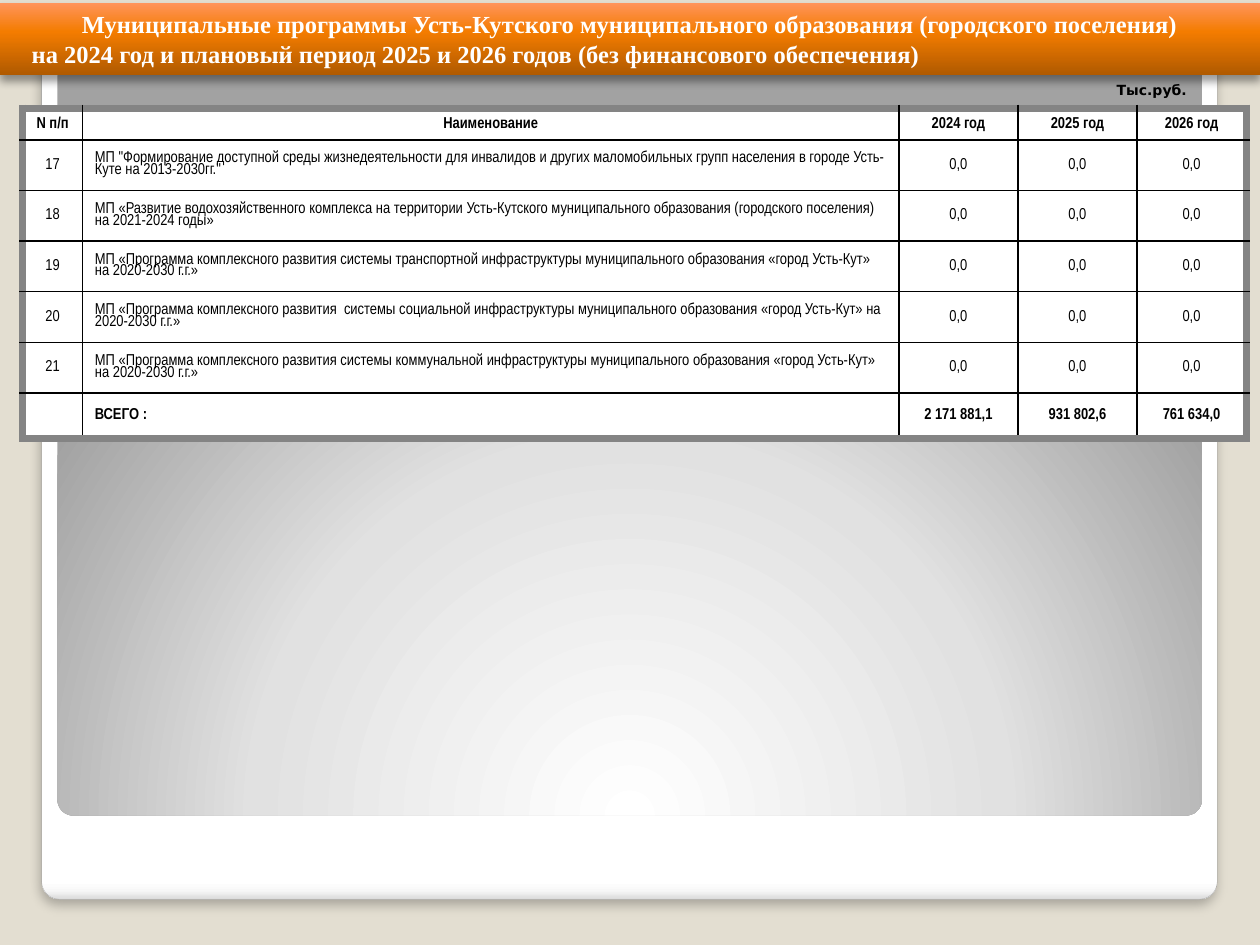
from lxml import etree
from pptx import Presentation
from pptx.dml.color import RGBColor
from pptx.enum.shapes import MSO_SHAPE
from pptx.enum.text import MSO_ANCHOR, PP_ALIGN
from pptx.oxml.ns import qn
from pptx.util import Cm, Pt

RECTANGLE, ROUNDED = MSO_SHAPE.RECTANGLE, MSO_SHAPE.ROUNDED_RECTANGLE
LEFT, CENTER = PP_ALIGN.LEFT, PP_ALIGN.CENTER
MIDDLE = MSO_ANCHOR.MIDDLE

BEIGE = RGBColor(0xE3, 0xDE, 0xD1)
WHITE = RGBColor(0xFF, 0xFF, 0xFF)
BLACK = RGBColor(0x00, 0x00, 0x00)
NEAR_WHITE = RGBColor(0xF7, 0xF7, 0xF7)
PALE_GREY = RGBColor(0xDA, 0xDA, 0xDA)
LIGHT_GREY = RGBColor(0xE1, 0xE1, 0xE1)
MID_GREY = RGBColor(0xA2, 0xA2, 0xA2)
CARD_LINE = RGBColor(0xA4, 0xA4, 0xA4)
FRAME_GREY = RGBColor(0x84, 0x84, 0x84)
DARK_ORANGE = RGBColor(0xB0, 0x5A, 0x00)
ORANGE = RGBColor(0xF4, 0x7C, 0x00)
LIGHT_ORANGE = RGBColor(0xFF, 0x94, 0x5C)

TITLE_LINES = [
    ("Муниципальные программы Усть-Кутского муниципального образования (городского поселения)", CENTER),
    ("на 2024 год и плановый период 2025 и 2026 годов (без финансового обеспечения)", LEFT),
]
HEADER = ["N п/п", "Наименование", "2024 год", "2025 год", "2026 год"]
PROGRAMS = [
    "МП \"Формирование доступной среды жизнедеятельности для инвалидов и других маломобильных групп населения в городе Усть-Куте на 2013-2030гг.\"",
    "МП «Развитие водохозяйственного комплекса на территории Усть-Кутского муниципального образования (городского поселения) на 2021-2024 годы»",
    "МП «Программа комплексного развития системы транспортной инфраструктуры муниципального образования «город Усть-Кут» на 2020-2030 г.г.»",
    "МП «Программа комплексного развития  системы социальной инфраструктуры муниципального образования «город Усть-Кут» на 2020-2030 г.г.»",
    "МП «Программа комплексного развития системы коммунальной инфраструктуры муниципального образования «город Усть-Кут» на 2020-2030 г.г.»",
]
FIRST_NUMBER = 17
TOTAL = ["", "ВСЕГО :", "2 171 881,1", "931 802,6", "761 634,0"]
COLUMN_WIDTHS = [1.2, 16.46, 2.4, 2.4, 2.2]
ROW_HEIGHTS = [0.64] + [1.02] * len(PROGRAMS) + [0.92]


def add_xml(parent, tag, **attributes):
    values = {name: str(value) for name, value in attributes.items()}
    return etree.SubElement(parent, qn(tag), values)


def set_gradient(shape, stops, angle=None):
    """Fill with (percent, colour) stops; without an angle, spread from below."""
    shape.fill.gradient()
    gradient = shape.element.spPr.find(qn("a:gradFill"))
    for child in list(gradient):
        gradient.remove(child)
    stop_list = add_xml(gradient, "a:gsLst")
    for percent, color in stops:
        stop = add_xml(stop_list, "a:gs", pos=percent * 1000)
        add_xml(stop, "a:srgbClr", val=color)
    if angle is None:
        radial = add_xml(gradient, "a:path", path="circle")
        add_xml(radial, "a:fillToRect", l=50000, t=175000, r=50000, b=-75000)
    else:
        add_xml(gradient, "a:lin", ang=angle * 60000, scaled=0)


def set_shadow(shape, opacity, blur, distance):
    effects = shape.element.spPr.find(qn("a:effectLst"))
    shadow = add_xml(effects, "a:outerShdw", blurRad=Pt(blur), dist=Pt(distance),
                     dir=90 * 60000, algn="t", rotWithShape=0)
    color = add_xml(shadow, "a:srgbClr", val=BLACK)
    add_xml(color, "a:alpha", val=opacity * 1000)


def add_panel(slide, kind, left, top, width, height):
    shape = slide.shapes.add_shape(kind, Cm(left), Cm(top), Cm(width), Cm(height))
    shape.shadow.inherit = False
    shape.line.fill.background()
    if kind == ROUNDED:
        shape.adjustments[0] = 0.021
    return shape


def style_paragraph(paragraph, text, font_name, size, color, bold, alignment):
    paragraph.text = text
    paragraph.alignment = alignment
    font = paragraph.font
    font.name, font.size, font.bold = font_name, Pt(size), bold
    font.color.rgb = color


def set_border(cell, position, side, color, width):
    line = etree.Element(qn(f"a:ln{side}"), {"w": str(Pt(width))})
    add_xml(add_xml(line, "a:solidFill"), "a:srgbClr", val=color)
    cell._tc.get_or_add_tcPr().insert(position, line)


def add_backdrop(slide):
    card = add_panel(slide, ROUNDED, 0.84, 0.91, 23.7, 17.22)
    set_gradient(card, [(0, WHITE), (98, WHITE), (99, NEAR_WHITE), (100, PALE_GREY)], 90)
    card.line.color.rgb = CARD_LINE
    card.line.width = Pt(0.16)
    set_shadow(card, 25, 6, 4)
    inner = add_panel(slide, ROUNDED, 1.16, 1.2, 23.07, 15.24)
    set_gradient(inner, [(0, WHITE), (55, LIGHT_GREY), (100, MID_GREY)])


def add_title(slide):
    banner = add_panel(slide, RECTANGLE, 0, 0.06, 25.4, 1.45)
    set_gradient(banner, [(0, DARK_ORANGE), (60, ORANGE), (100, LIGHT_ORANGE)], 270)
    set_shadow(banner, 40, 5.2, 3)
    frame = banner.text_frame
    frame.word_wrap = True
    frame.vertical_anchor = MIDDLE
    frame.margin_left = frame.margin_right = Cm(0.64)
    frame.margin_top = frame.margin_bottom = 0
    for index, (text, alignment) in enumerate(TITLE_LINES):
        paragraph = frame.add_paragraph() if index else frame.paragraphs[0]
        style_paragraph(paragraph, text, "Times New Roman", 14, WHITE, True, alignment)


def add_program_table(slide):
    rows = [HEADER]
    for number, name in enumerate(PROGRAMS, FIRST_NUMBER):
        rows.append([str(number), name] + ["0,0"] * 3)
    rows.append(TOTAL)
    last_row, last_column = len(rows) - 1, len(HEADER) - 1

    table = slide.shapes.add_table(len(rows), len(HEADER), Cm(0.46), Cm(2.18),
                                   Cm(sum(COLUMN_WIDTHS)), Cm(sum(ROW_HEIGHTS))).table
    for column, width in zip(table.columns, COLUMN_WIDTHS):
        column.width = Cm(width)
    for row, height in zip(table.rows, ROW_HEIGHTS):
        row.height = Cm(height)

    for r, values in enumerate(rows):
        for c, text in enumerate(values):
            cell = table.cell(r, c)
            cell.fill.solid()
            cell.fill.fore_color.rgb = WHITE
            cell.vertical_anchor = MIDDLE
            cell.margin_top = cell.margin_bottom = Cm(0.05)
            paragraph = cell.text_frame.paragraphs[0]
            alignment = LEFT if c == 1 and r > 0 else CENTER
            style_paragraph(paragraph, text, "Arial Narrow", 9, BLACK,
                            r in (0, last_row), alignment)
            if c == 1:
                paragraph.line_spacing = 0.8 if 0 < r < last_row else 1.0
            # Thick grey on the outer frame, thin black inside
            outer = {"L": c == 0, "R": c == last_column, "T": r == 0, "B": r == last_row}
            for position, (side, is_outer) in enumerate(outer.items()):
                color, width = (FRAME_GREY, 4.5) if is_outer else (BLACK, 1)
                set_border(cell, position, side, color, width)


def add_unit_label(slide):
    box = slide.shapes.add_textbox(Cm(22.22), Cm(1.52), Cm(2), Cm(0.58))
    frame = box.text_frame
    frame.word_wrap = False
    frame.vertical_anchor = MIDDLE
    style_paragraph(frame.paragraphs[0], "Тыс.руб.", "DejaVu Sans", 8, BLACK, True, CENTER)


def main():
    presentation = Presentation()
    presentation.slide_width, presentation.slide_height = Cm(25.4), Cm(19.05)
    slide = presentation.slides.add_slide(presentation.slide_layouts[6])
    slide.background.fill.solid()
    slide.background.fill.fore_color.rgb = BEIGE
    add_backdrop(slide)
    add_title(slide)
    add_program_table(slide)
    add_unit_label(slide)
    presentation.save("out.pptx")


if __name__ == "__main__":
    main()
